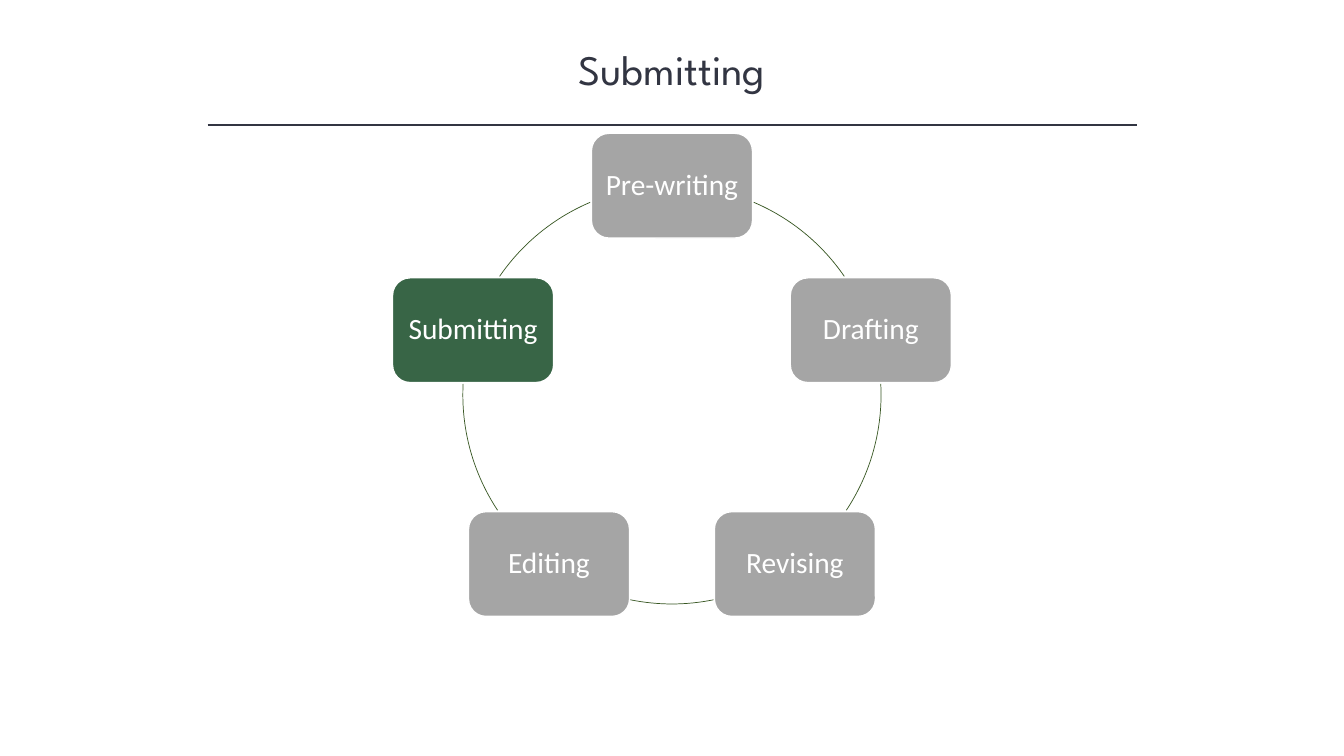
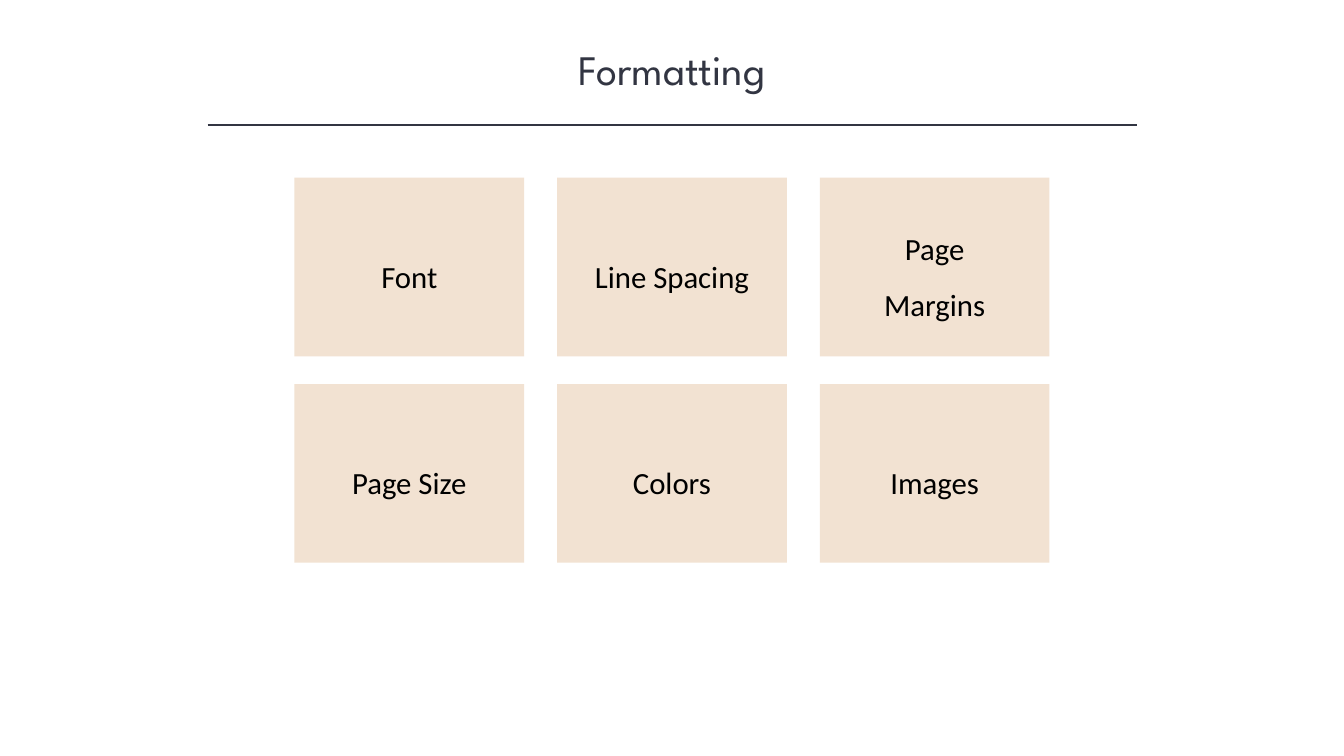
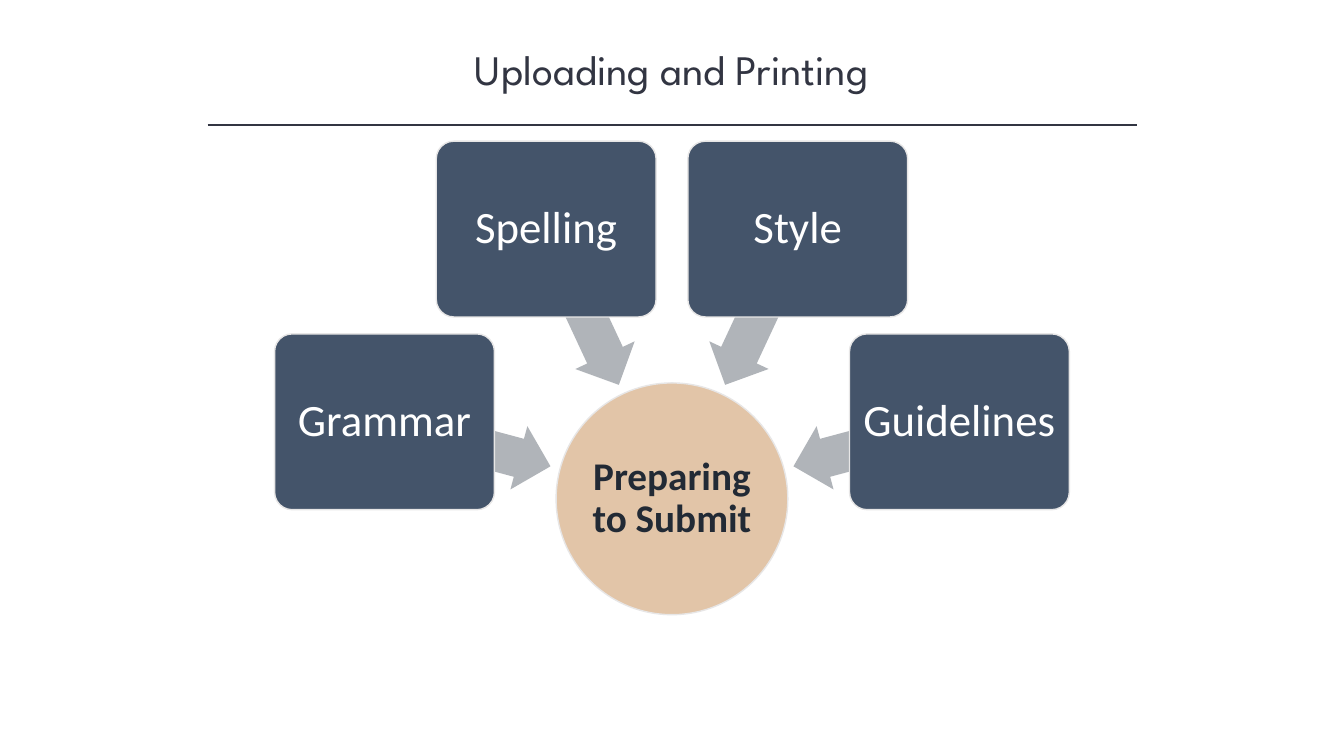
from math import cos, radians, sin

from lxml import etree
from pptx import Presentation
from pptx.dml.color import RGBColor
from pptx.enum.shapes import MSO_CONNECTOR, MSO_SHAPE
from pptx.enum.text import MSO_ANCHOR, PP_ALIGN
from pptx.oxml.ns import qn
from pptx.util import Cm, Pt

ARC, ARROW, CIRCLE = MSO_SHAPE.ARC, MSO_SHAPE.LEFT_ARROW, MSO_SHAPE.OVAL
RECTANGLE, ROUNDED = MSO_SHAPE.RECTANGLE, MSO_SHAPE.ROUNDED_RECTANGLE
STRAIGHT = MSO_CONNECTOR.STRAIGHT
CENTER, MIDDLE = PP_ALIGN.CENTER, MSO_ANCHOR.MIDDLE

INK = RGBColor(0x32, 0x35, 0x42)
BLACK = RGBColor(0x00, 0x00, 0x00)
WHITE = RGBColor(0xFF, 0xFF, 0xFF)
PALE_GRAY = RGBColor(0xE7, 0xE6, 0xE6)
GRAY = RGBColor(0xA5, 0xA5, 0xA5)
ARROW_GRAY = RGBColor(0xB0, 0xB4, 0xB9)
GREEN = RGBColor(0x38, 0x65, 0x46)
DARK_GREEN = RGBColor(0x38, 0x57, 0x23)
CREAM = RGBColor(0xF2, 0xE2, 0xD2)
TAN = RGBColor(0xE2, 0xC5, 0xA8)
SLATE = RGBColor(0x44, 0x54, 0x6A)
NAVY = RGBColor(0x22, 0x2A, 0x35)

TITLE_FONT, BODY_FONT = "League Spartan", "Calibri"
SLIDE_WIDTH, SLIDE_HEIGHT = 33.87, 19.05
MIDDLE_X = SLIDE_WIDTH / 2


def polar(center_x, center_y, radius, angle):
    """Point at an angle in degrees, clockwise from the right."""
    turn = radians(angle)
    return center_x + radius * cos(turn), center_y + radius * sin(turn)


def add_centered(slide, kind, center, width, height, fill=None, line=None, weight=1):
    x, y = center
    shape = slide.shapes.add_shape(
        kind, Cm(x - width / 2), Cm(y - height / 2), Cm(width), Cm(height))
    shape.shadow.inherit = False
    if fill is None:
        shape.fill.background()
    else:
        shape.fill.solid()
        shape.fill.fore_color.rgb = fill
    if line is None:
        shape.line.fill.background()
    else:
        shape.line.color.rgb = line
        shape.line.width = Pt(weight)
    return shape


def write(shape, text, size, color, font=BODY_FONT, inset=0.15, spacing=0.9, bold=False):
    frame = shape.text_frame
    frame.word_wrap = True
    frame.vertical_anchor = MIDDLE
    frame.margin_left = frame.margin_right = Cm(inset)
    frame.margin_top = frame.margin_bottom = Cm(0.1)
    paragraph = frame.paragraphs[0]
    paragraph.text = text
    paragraph.alignment = CENTER
    paragraph.line_spacing = spacing
    paragraph.font.name = font
    paragraph.font.size = Pt(size)
    paragraph.font.bold = bold
    paragraph.font.color.rgb = color


def add_titled_slide(deck, title):
    slide = deck.slides.add_slide(deck.slide_layouts[6])
    heading = slide.shapes.add_textbox(
        Cm(MIDDLE_X - 12.7), Cm(0.95), Cm(25.4), Cm(1.54))
    write(heading, title, 30, INK, font=TITLE_FONT, spacing=1.0)
    rule = slide.shapes.add_connector(
        STRAIGHT, Cm(5.23), Cm(3.15), Cm(28.65), Cm(3.15))
    rule.line.color.rgb = INK
    rule.line.width = Pt(1)
    etree.SubElement(rule._element.spPr, qn("a:effectLst"))
    return slide


def add_cycle(slide, center_x, center_y, radius, steps, current):
    """Ring of steps, clockwise from the top, with the current one in green."""
    # Visible arcs between the boxes, in degrees clockwise from the top
    arcs = [(23, 55.5), (87, 123.5), (168.5, 191.5), (236.5, 273), (304.5, 337)]
    for start, end in arcs:
        arc = add_centered(slide, ARC, (center_x, center_y), 2 * radius, 2 * radius,
                           line=DARK_GREEN, weight=0.5)
        for index, angle in enumerate((start, end)):
            # One degree is 60000 units, and an adjustment of 1 is 100000
            arc.adjustments[index] = (angle - 90) % 360 * 0.6
    for index, step in enumerate(steps):
        place = polar(center_x, center_y, radius, 360 / len(steps) * index - 90)
        box = add_centered(slide, ROUNDED, place, 4.06, 2.64,
                           GREEN if step == current else GRAY, WHITE)
        write(box, step, 21, WHITE)


def add_card_grid(slide, left, top, rows):
    width, height, gap_x, gap_y = 5.79, 4.5, 0.83, 0.7
    for row, labels in enumerate(rows):
        for column, label in enumerate(labels):
            place = (left + width / 2 + column * (width + gap_x),
                     top + height / 2 + row * (height + gap_y))
            card = add_centered(slide, RECTANGLE, place, width, height, CREAM)
            write(card, label, 22, BLACK, inset=0.9, spacing=1.5)


def add_converging(slide, center_x, center_y, goal, inputs):
    """Fan of inputs, each with an arrow to the goal in the middle."""
    hub = add_centered(slide, CIRCLE, (center_x, center_y), 5.84, 5.84, TAN, PALE_GRAY)
    write(hub, goal, 28, NAVY, inset=0.05, bold=True)
    for index, label in enumerate(inputs):
        angle = 195 + 50 * index
        arrow = add_centered(slide, ARROW, polar(center_x, center_y, 5.34, angle),
                             4.34, 1.65, ARROW_GRAY)
        arrow.adjustments[0] = 0.6
        arrow.rotation = angle
        box = add_centered(slide, ROUNDED, polar(center_x, center_y, 7.5, angle),
                           5.54, 4.43, SLATE, PALE_GRAY)
        box.adjustments[0] = 0.1
        write(box, label, 32, WHITE)


def main():
    deck = Presentation()
    deck.slide_width, deck.slide_height = Cm(SLIDE_WIDTH), Cm(SLIDE_HEIGHT)

    submitting = add_titled_slide(deck, "Submitting")
    add_cycle(submitting, MIDDLE_X, 9.95, 5.27,
              ["Pre-writing", "Drafting", "Revising", "Editing", "Submitting"],
              current="Submitting")

    formatting = add_titled_slide(deck, "Formatting")
    add_card_grid(formatting, 7.42, 4.48,
                  [["Font", "Line Spacing", "Page Margins"],
                   ["Page Size", "Colors", "Images"]])

    uploading = add_titled_slide(deck, "Uploading and Printing")
    add_converging(uploading, MIDDLE_X, 12.57, "Preparing to Submit",
                   ["Grammar", "Spelling", "Style", "Guidelines"])

    deck.save("out.pptx")


if __name__ == "__main__":
    main()
